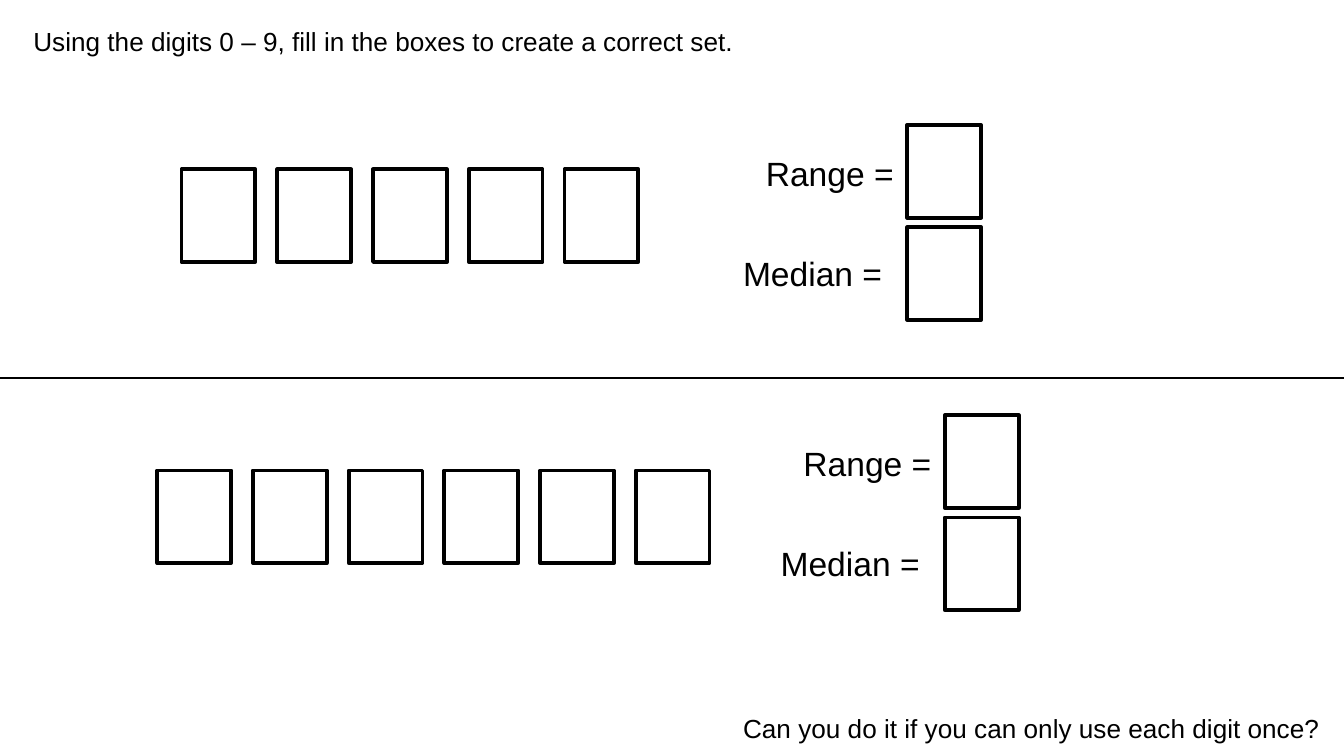
from dataclasses import dataclass

from lxml import etree
from pptx import Presentation
from pptx.dml.color import RGBColor
from pptx.enum import shapes, text
from pptx.oxml.ns import qn
from pptx.slide import Slide
from pptx.util import Inches, Pt


@dataclass(frozen=True)
class Theme:
    font: str = "Arial"
    ink: RGBColor = RGBColor(0x00, 0x00, 0x00)
    paper: RGBColor = RGBColor(0xFF, 0xFF, 0xFF)
    prompt_size: int = 14
    label_size: int = 18
    box_line: float = 2
    divider_line: float = 0.75


@dataclass(frozen=True)
class Label:
    words: str
    left: float
    top: float
    width: float
    height: float
    size: int
    wrap: bool = False


@dataclass(frozen=True)
class Puzzle:
    """A row of digit boxes with its range and median answer boxes."""
    count: int
    row_left: float
    row_right: float
    row_top: float
    answer_left: float
    answer_top: float


THEME = Theme()
SLIDE_W = 10
SLIDE_H = SLIDE_W * 9 / 16
BOX_W, BOX_H = 0.55, 0.69
ANSWER_STEP = 0.76

PROMPTS = [
    Label("Using the digits 0 – 9, fill in the boxes to create a correct set.",
          0.15, 0.14, 5.43, 0.34, THEME.prompt_size),
    Label("Can you do it if you can only use each digit once?",
          5.43, 5.25, 4.51, 0.34, THEME.prompt_size),
]
# Positions relative to the top left of a puzzle's first answer box
ANSWER_LABELS = [
    Label("Range =", -1.15, 0.16, 1.63, 0.4, THEME.label_size, True),
    Label("Median =", -1.32, 0.9, 1.32, 0.4, THEME.label_size, True),
]
PUZZLES = [
    Puzzle(5, 1.35, 4.75, 1.26, 6.75, 0.93),
    Puzzle(6, 1.17, 5.28, 3.5, 7.03, 3.09),
]


def add_label(s: Slide, label: Label, dx: float = 0, dy: float = 0) -> None:
    sp = s.shapes.add_textbox(Inches(label.left + dx), Inches(label.top + dy),
                              Inches(label.width), Inches(label.height))
    tf = sp.text_frame
    tf.word_wrap = label.wrap
    tf.auto_size = text.MSO_AUTO_SIZE.SHAPE_TO_FIT_TEXT
    p = tf.paragraphs[0]
    p.text = label.words
    p.font.name = THEME.font
    p.font.size = Pt(label.size)
    p.font.color.rgb = THEME.ink


def add_box(s: Slide, left: float, top: float) -> None:
    sp = s.shapes.add_shape(shapes.MSO_SHAPE.RECTANGLE, Inches(left), Inches(top),
                            Inches(BOX_W), Inches(BOX_H))
    sp.shadow.inherit = False
    sp.fill.solid()
    sp.fill.fore_color.rgb = THEME.paper
    sp.line.color.rgb = THEME.ink
    sp.line.width = Pt(THEME.box_line)
    etree.SubElement(sp.line._get_or_add_ln(), qn("a:round"))


def add_puzzle(s: Slide, puzzle: Puzzle) -> None:
    for label in ANSWER_LABELS:
        add_label(s, label, puzzle.answer_left, puzzle.answer_top)
    step = (puzzle.row_right - BOX_W - puzzle.row_left) / (puzzle.count - 1)
    for i in range(puzzle.count):
        add_box(s, puzzle.row_left + i * step, puzzle.row_top)
    for i in range(len(ANSWER_LABELS)):
        add_box(s, puzzle.answer_left, puzzle.answer_top + i * ANSWER_STEP)


def add_divider(s: Slide) -> None:
    y = Inches(SLIDE_H / 2)
    line = s.shapes.add_connector(shapes.MSO_CONNECTOR.STRAIGHT,
                                  0, y, Inches(SLIDE_W), y)
    line.line.color.rgb = THEME.ink
    line.line.width = Pt(THEME.divider_line)
    etree.SubElement(line._element.spPr, qn("a:effectLst"))


def main() -> None:
    prs = Presentation()
    prs.slide_width, prs.slide_height = Inches(SLIDE_W), Inches(SLIDE_H)
    s = prs.slides.add_slide(prs.slide_layouts[6])
    for prompt in PROMPTS:
        add_label(s, prompt)
    for puzzle in PUZZLES:
        add_puzzle(s, puzzle)
    add_divider(s)
    prs.save("out.pptx")


if __name__ == "__main__":
    main()
